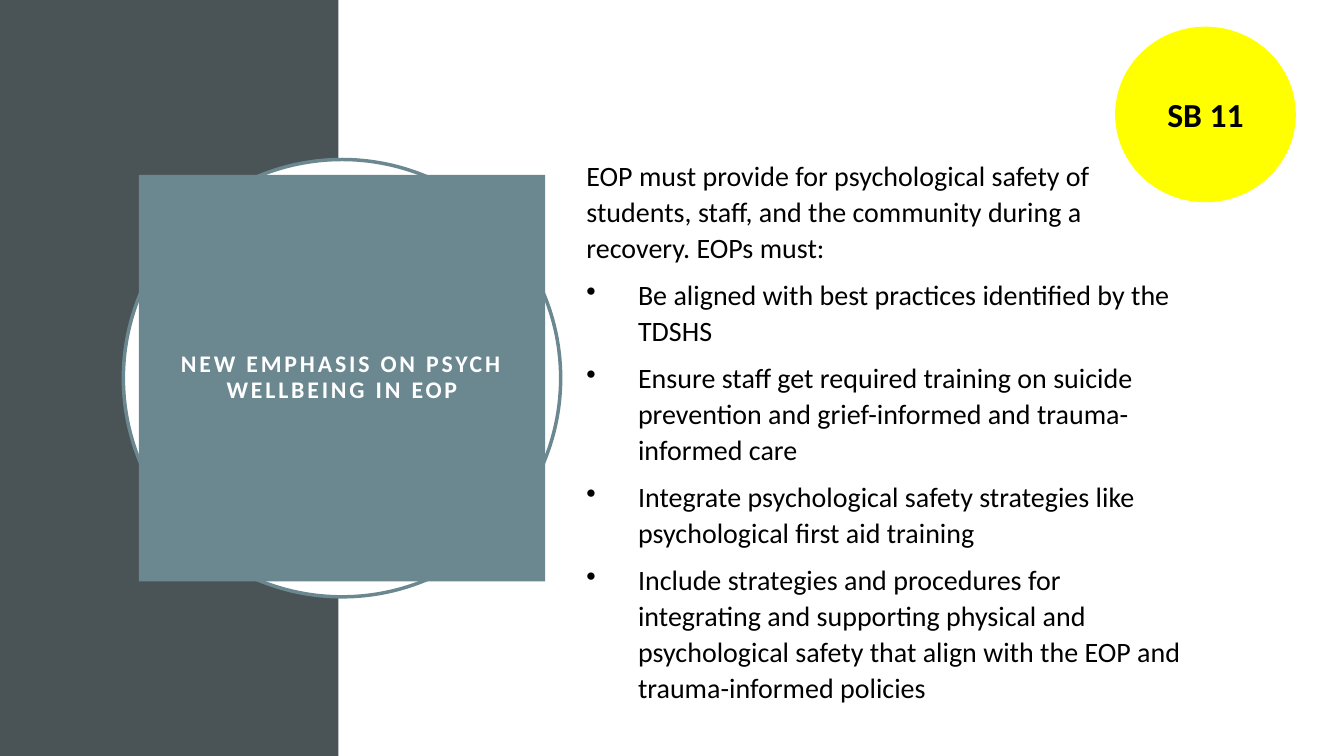
from pptx import Presentation
from pptx import util as u
from pptx.dml.color import RGBColor
from pptx.enum import shapes, text
from pptx.oxml.ns import qn

# Content
TITLE = "NEW EMPHASIS ON PSYCH WELLBEING IN EOP"
BADGE = "SB 11"
INTRO = ("EOP must provide for psychological safety of students, staff, "
         "and the community during a recovery. EOPs must:")
POINTS = [
    "Be aligned with best practices identified by the TDSHS",
    "Ensure staff get required training on suicide prevention and "
    "grief-informed and trauma-informed care",
    "Integrate psychological safety strategies like psychological first aid training",
    "Include strategies and procedures for integrating and supporting physical and "
    "psychological safety that align with the EOP and trauma-informed policies",
]


# Theme
class Theme:
    font = "Calibri"
    dark, teal, white = "4A5356", "6B8891", "FFFFFF"
    yellow, black = "FFFF00", "000000"
    title, badge, body = 17, 24, 20


# Layout in centimetres
WIDE, HIGH = 33.87, 19.05
MID_X, MID_Y = 8.62, 9.53
RING, CARD = 11.02, 10.24
INDENT = 1.3

deck = Presentation()
deck.slide_width, deck.slide_height = u.Cm(WIDE), u.Cm(HIGH)
slide = deck.slides.add_slide(deck.slide_layouts[6])


def color(code):
    return RGBColor.from_string(code)


def center(size):
    return MID_X - size / 2, MID_Y - size / 2, size, size


def draw(kind, box, fill, line=None, width=1):
    shape = slide.shapes.add_shape(kind, *map(u.Cm, box))
    shape.shadow.inherit = False
    shape.fill.solid()
    shape.fill.fore_color.rgb = color(fill)
    if line:
        shape.line.color.rgb = color(line)
        shape.line.width = u.Pt(width)
    else:
        shape.line.fill.background()
    return shape


def write(para, words, size, ink=Theme.black, bold=False, align=None,
          lead=None, after=None, track=0, bullet=False):
    if bullet:
        props = para._p.get_or_add_pPr()
        props.set("marL", str(u.Cm(INDENT)))
        props.set("indent", str(-u.Cm(INDENT)))
        mark = props.makeelement(qn("a:buChar"), {"char": "•"})
        props.append(mark)
    para.alignment = align
    para.line_spacing = lead
    if after:
        para.space_after = u.Pt(after)
    run = para.add_run()
    run.text = words
    font = run.font
    font.name, font.size, font.bold = Theme.font, u.Pt(size), bold
    font.color.rgb = color(ink)
    if track:
        font._element.set("spc", str(track * 100))


# Side panel and ring
draw(shapes.MSO_SHAPE.RECTANGLE, (0, 0, 8.53, HIGH), Theme.dark)
draw(shapes.MSO_SHAPE.OVAL, center(RING), Theme.white, Theme.teal, 2.5)

# Title card
card = draw(shapes.MSO_SHAPE.RECTANGLE, center(CARD), Theme.teal)
frame = card.text_frame
frame.word_wrap = True
frame.vertical_anchor = text.MSO_ANCHOR.MIDDLE
frame.margin_left = frame.margin_right = u.Cm(0.51)
frame.margin_top = frame.margin_bottom = u.Cm(0.51)
write(frame.paragraphs[0], TITLE, Theme.title, ink=Theme.white, bold=True,
      align=text.PP_ALIGN.CENTER, lead=0.9, track=2)

# Badge
badge = draw(shapes.MSO_SHAPE.OVAL, (28.12, 0.69, 4.52, 4.39),
             Theme.yellow, Theme.yellow)
badge.text_frame.vertical_anchor = text.MSO_ANCHOR.MIDDLE
write(badge.text_frame.paragraphs[0], BADGE, Theme.badge, bold=True,
      align=text.PP_ALIGN.CENTER)

# Body text
body = slide.shapes.add_textbox(*map(u.Cm, (14.53, 3.81, 15.7, 14.55))).text_frame
body.word_wrap = True
body.auto_size = text.MSO_AUTO_SIZE.SHAPE_TO_FIT_TEXT
write(body.paragraphs[0], INTRO, Theme.body, lead=1.07, after=8)
for point in POINTS:
    write(body.add_paragraph(), point, Theme.body, lead=1.07, after=8, bullet=True)

deck.save("out.pptx")
